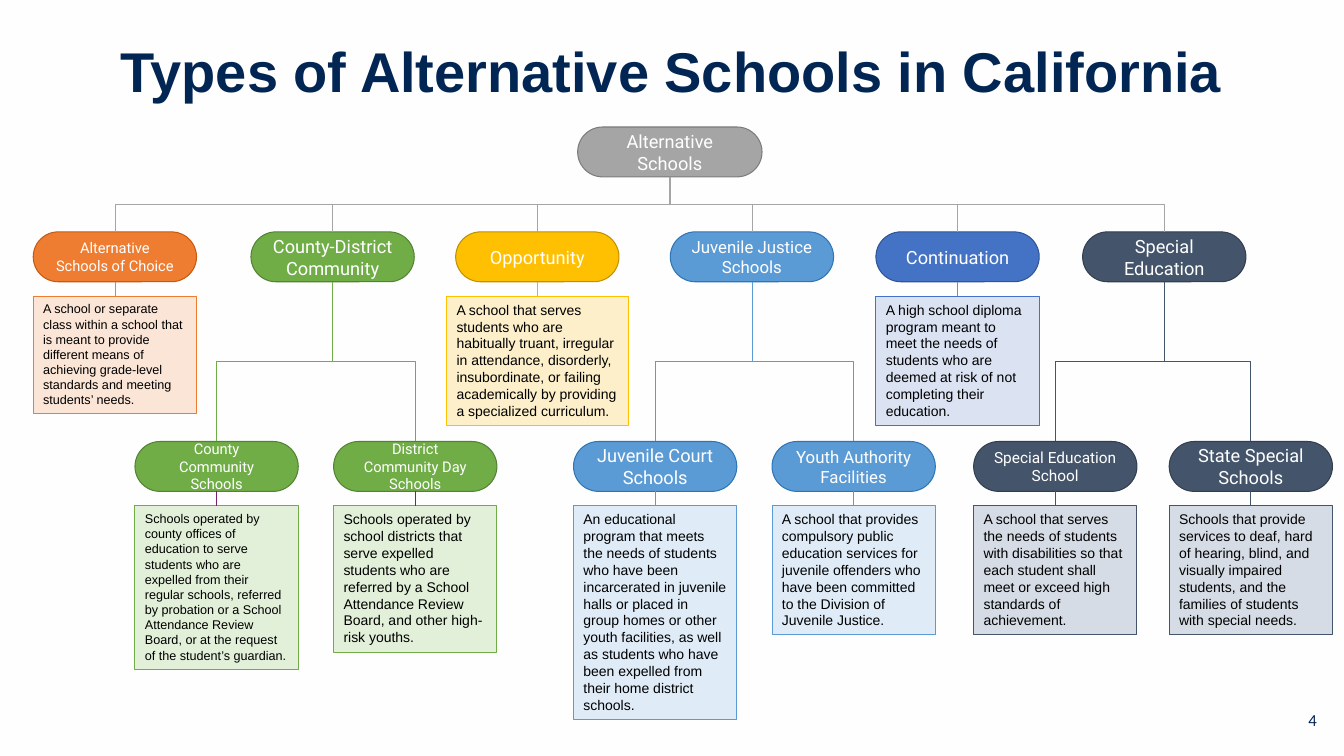
from lxml.etree import SubElement
from pptx import Presentation
from pptx.dml.color import RGBColor
from pptx.enum.shapes import MSO_CONNECTOR, MSO_SHAPE
from pptx.enum.text import MSO_ANCHOR, MSO_AUTO_SIZE, PP_ALIGN
from pptx.oxml.ns import qn
from pptx.util import Inches, Pt

deck = Presentation()
deck.slide_width, deck.slide_height = Inches(13.33), Inches(7.5)
# Grid: 100 columns by 100 rows
COL, ROW = deck.slide_width / 100, deck.slide_height / 100
slide = deck.slides.add_slide(deck.slide_layouts[5])
shapes = slide.shapes


def paint(target, code):
    """Give a fill, or a font or line colour, a hex value."""
    if hasattr(target, "solid"):
        target.solid()
        target = target.fore_color
    else:
        target = target.color
    target.rgb = RGBColor.from_string(code)


def card(kind, mid, top, wide, high, fill, edge, text, size, font, ink):
    """Add a text shape centred on column mid."""
    box = shapes.add_shape(kind, int((mid - wide / 2) * COL), int(top * ROW),
                           int(wide * COL), int(high * ROW))
    box.shadow.inherit = False
    paint(box.fill, fill)
    paint(box.line, edge)
    box.line.width = Pt(0.75)
    frame = box.text_frame
    frame.word_wrap = True
    frame.text = text
    run = frame.paragraphs[0].runs[0]
    run.font.size, run.font.name = Pt(size), font
    paint(run.font, ink)
    if kind == MSO_SHAPE.ROUNDED_RECTANGLE:
        box.adjustments[0] = 0.5
        frame.margin_left = frame.margin_right = Inches(0.13)
        frame.margin_top = frame.margin_bottom = Inches(0.13)
        frame.vertical_anchor = MSO_ANCHOR.MIDDLE
        frame.paragraphs[0].alignment = PP_ALIGN.CENTER
    else:
        frame.vertical_anchor = MSO_ANCHOR.TOP
        frame.paragraphs[0].alignment = PP_ALIGN.LEFT
        frame.auto_size = MSO_AUTO_SIZE.SHAPE_TO_FIT_TEXT
    return box


# Families: fill, edge, pale fill
HUES = {
    "grey": ("A5A5A5", "7C7C7C", ""),
    "orange": ("EE7D31", "C55A10", "FBE5D6"),
    "green": ("70AD47", "548235", "E3F0D9"),
    "gold": ("FEC000", "BF9000", "FCEFCA"),
    "sky": ("5B9BD5", "2D75B6", "DFEBF7"),
    "blue": ("4472C4", "2E5597", "DBE3F3"),
    "slate": ("44546A", "333F50", "D6DCE5"),
}

# Schools: name, parent, family, centre column, label size
ROOT = "Alternative Schools"
COUNTY, COURT, NEEDS = "County-District Community", "Juvenile Justice Schools", "Special Education"
SCHOOLS = [
    (ROOT, None, "grey", 49.84, 13),
    ("Alternative Schools of Choice", ROOT, "orange", 8.55, 10.5),
    (COUNTY, ROOT, "green", 24.75, 13),
    ("Opportunity", ROOT, "gold", 39.98, 13),
    (COURT, ROOT, "sky", 55.95, 12),
    ("Continuation", ROOT, "blue", 71.25, 13),
    (NEEDS, ROOT, "slate", 86.63, 13),
    ("County Community Schools", COUNTY, "green", 16.12, 10.5),
    ("District Community Day Schools", COUNTY, "green", 30.9, 10.5),
    ("Juvenile Court Schools", COURT, "sky", 48.75, 13),
    ("Youth Authority Facilities", COURT, "sky", 63.52, 12),
    ("Special Education School", NEEDS, "slate", 78.52, 11),
    ("State Special Schools", NEEDS, "slate", 93.07, 13),
]

# Notes: width, height, text size, stem colour, text
NOTES = {
    "Alternative Schools of Choice": (12.15, 15.47, 9, "F18900", "A school or separate class within a school that is meant to provide different means of achieving grade-level standards and meeting students’ needs."),
    "Opportunity": (13.5, 17.07, 10, "E5A55D", "A school that serves students who are habitually truant, irregular in attendance, disorderly, insubordinate, or failing academically by providing a specialized curriculum."),
    "Continuation": (12.15, 17.07, 10, "19B2E3", "A high school diploma program meant to meet the needs of students who are deemed at risk of not completing their education."),
    "County Community Schools": (12.15, 21.6, 9, "76236B", "Schools operated by county offices of education to serve students who are expelled from their regular schools, referred by probation or a School Attendance Review Board, or at the request of the student’s guardian."),
    "District Community Day Schools": (12.15, 19.33, 10, "76236B", "Schools operated by school districts that serve expelled students who are referred by a School Attendance Review Board, and other high-risk youths."),
    "Juvenile Court Schools": (12.15, 28.27, 10, "5B9BD5", "An educational program that meets the needs of students who have been incarcerated in juvenile halls or placed in group homes or other youth facilities, as well as students who have been expelled from their home district schools."),
    "Youth Authority Facilities": (12.15, 17.07, 10, "5B9BD5", "A school that provides compulsory public education services for juvenile offenders who have been committed to the Division of Juvenile Justice."),
    "Special Education School": (12.15, 17.07, 10, "44546A", "A school that serves the needs of students with disabilities so that each student shall meet or exceed high standards of achievement."),
    "State Special Schools": (12.15, 17.07, 10, "44546A", "Schools that provide services to deaf, hard of hearing, blind, and visually impaired students, and the families of students with special needs."),
}

# Background and title
paint(slide.background.fill, "FFFEFF")
title = shapes.title
title.left, title.top = int(1.95 * COL), int(2.8 * ROW)
title.width, title.height = int(95.95 * COL), int(14 * ROW)
title.text_frame.text = "Types of Alternative Schools in California"
title.text_frame.vertical_anchor = MSO_ANCHOR.MIDDLE
head = title.text_frame.paragraphs[0]
head.alignment, head.line_spacing = PP_ALIGN.CENTER, 0.9
font = head.runs[0].font
font.size, font.name, font.bold = Pt(40), "Arial", True
paint(font, "012654")

# Page number
page = shapes.add_textbox(int(76.22 * COL), int(92.53 * ROW), int(22.5 * COL), int(5.33 * ROW))
page.text_frame.word_wrap = True
page.text_frame.text = "4"
page.text_frame.vertical_anchor = MSO_ANCHOR.MIDDLE
line = page.text_frame.paragraphs[0]
line.alignment = PP_ALIGN.RIGHT
line.runs[0].font.size, line.runs[0].font.name = Pt(12), "Calibri"
paint(line.runs[0].font, "002554")

# Labels and their notes, by level
TOPS, HIGH, GAP = (16.8, 30.67, 58.4), 6.6, 1.93
pills, links, level, fills = {}, [], {None: -1}, {}
for name, boss, hue, mid, size in SCHOOLS:
    fill, edge, pale = HUES[hue]
    level[name], fills[name] = level[boss] + 1, fill
    top = TOPS[level[name]]
    wide = 12.15 if boss else 13.72
    pill = card(MSO_SHAPE.ROUNDED_RECTANGLE, mid, top, wide, HIGH, fill, edge,
                name, size, "Roboto", "FFFFFF")
    pills[name] = pill
    if boss:
        links.append((pills[boss], pill, fills[boss], MSO_CONNECTOR.ELBOW))
    if name in NOTES:
        wide, high, size, stem, text = NOTES[name]
        note = card(MSO_SHAPE.RECTANGLE, mid, top + HIGH + GAP, wide, high,
                    pale, fill, text, size, "Arial", "000000")
        links.append((pill, note, stem, MSO_CONNECTOR.STRAIGHT))

# Links from the bottom of one shape to the top of the next
for upper, lower, code, kind in links:
    link = shapes.add_connector(kind, 0, 0, 0, 0)
    link.begin_connect(upper, 2)
    link.end_connect(lower, 0)
    paint(link.line, code)
    link.line.width = Pt(0.5)
    SubElement(link._element.spPr, qn("a:effectLst"))
    if kind == MSO_CONNECTOR.ELBOW:
        # Turn the elbow so that it leaves downwards
        right = link.end_x > link.begin_x
        wide, high = link.width, link.height
        link.left, link.top = link.left + (wide - high) // 2, link.top + (high - wide) // 2
        link.width, link.height = high, wide
        frame = link._element.spPr.find(qn("a:xfrm"))
        frame.set("rot", "16200000" if right else "5400000")
        frame.set("flipH", "1" if right else "0")

deck.save("out.pptx")
